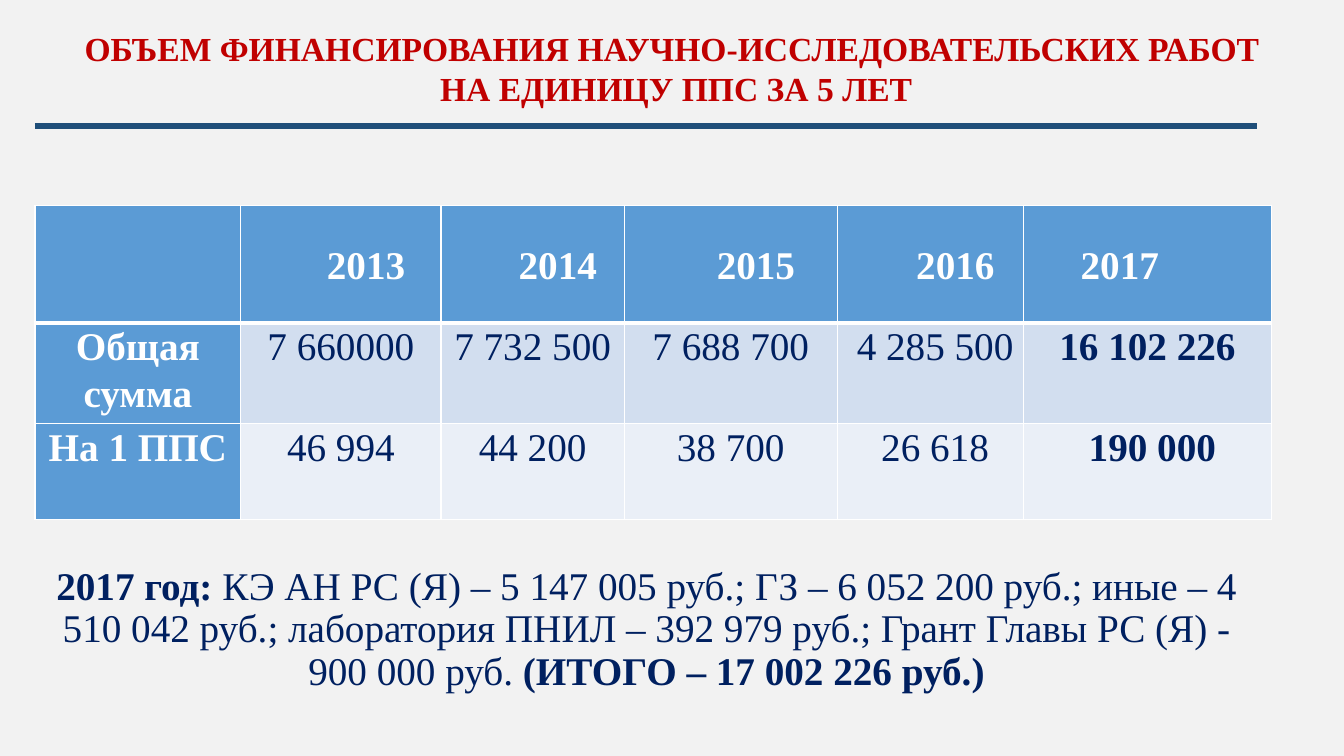
from lxml.etree import SubElement
from pptx import Presentation
from pptx.dml.color import RGBColor
from pptx.enum.shapes import MSO_CONNECTOR as CONN
from pptx.enum.text import MSO_ANCHOR as ANCHOR, PP_ALIGN as ALIGN
from pptx.oxml import parse_xml
from pptx.oxml.ns import nsdecls, qn
from pptx.util import Pt

FONT = "Times New Roman"
RED, NAVY, WHITE = "C00000", "002060", "FFFFFF"
RULE, HEADER, BANDS = "1F4E79", "5B9BD5", ["D2DEEF", "EAEFF7"]
COLS = [147, 143, 131, 152, 133, 177.4]
ROWS = [83.5, 65.5, 68.4]
YEARS = ["2013", "2014", "2015", "2016", "2017"]
AMOUNTS = [
    ("Общая сумма", "7 660000", "7 732 500", "7 688 700", " 4 285 500", "16 102 226"),
    ("На 1 ППС", "46 994", "44 200", "38 700", " 26 618", " 190 000"),
]


def color(value):
    """Turn a hex string into a colour."""
    return RGBColor.from_string(value)


def add_run(p, text, size, fill, bold):
    """Append one styled run to a paragraph."""
    r = p.add_run()
    r.text = text
    r.font.name, r.font.size, r.font.bold = FONT, Pt(size), bold
    r.font.color.rgb = color(fill)


def add_text(s, box, paragraphs, size, fill, anchor, spacing):
    """Add a centred text box; each paragraph is a list of (text, bold)."""
    sp = s.shapes.add_textbox(*map(Pt, box))
    tf = sp.text_frame
    tf.word_wrap, tf.vertical_anchor = True, anchor
    for i, runs in enumerate(paragraphs):
        p = tf.add_paragraph() if i else tf.paragraphs[0]
        p.alignment, p.line_spacing = ALIGN.CENTER, spacing
        for text, bold in runs:
            add_run(p, text, size, fill, bold)


def add_rule(s, x1, x2, y):
    """Add the thick horizontal line under the title."""
    line = s.shapes.add_connector(CONN.STRAIGHT, Pt(x1), Pt(y), Pt(x2), Pt(y))
    line.line.color.rgb = color(RULE)
    line.line.width = Pt(4.5)
    SubElement(line._element.spPr, qn("a:effectLst"))


def set_borders(cell, top, bottom):
    """Draw white borders round a cell, 1 pt at the sides."""
    widths = {"lnL": 1, "lnR": 1, "lnT": top, "lnB": bottom}
    for i, (tag, width) in enumerate(widths.items()):
        cell._tc.get_or_add_tcPr().insert(i, parse_xml(
            f'<a:{tag} {nsdecls("a")} w="{Pt(width)}"><a:solidFill>'
            f'<a:srgbClr val="{WHITE}"/></a:solidFill></a:{tag}>'))


def fill_cell(cell, text, row, col):
    """Fill and format one cell by its place in the table."""
    heading = row == 0 or col == 0
    cell.fill.solid()
    cell.fill.fore_color.rgb = color(HEADER if heading else BANDS[row - 1])
    set_borders(cell, 3 if row == 1 else 1, 3 if row == 0 else 1)
    cell.margin_left = cell.margin_right = Pt(5)
    cell.margin_top = cell.margin_bottom = 0
    cell.vertical_anchor = ANCHOR.TOP if row else ANCHOR.MIDDLE
    p = cell.text_frame.paragraphs[0]
    p.alignment, p.line_spacing = ALIGN.CENTER, 1.07
    last = col == len(COLS) - 1
    if row == 0:
        p._p.get_or_add_pPr().set("marL", str(Pt(36)))
        if last:
            p.alignment, p.space_after = ALIGN.LEFT, Pt(8)
    if text:
        add_run(p, text, 28, WHITE if heading else NAVY, heading or last)


def add_funding_table(s, left, top):
    """Add the table of funding by year."""
    size = Pt(sum(COLS)), Pt(sum(ROWS))
    table = s.shapes.add_table(len(ROWS), len(COLS), Pt(left), Pt(top), *size).table
    for column, width in zip(table.columns, COLS):
        column.width = Pt(width)
    for row, height in zip(table.rows, ROWS):
        row.height = Pt(height)
    for i, values in enumerate([("", *YEARS), *AMOUNTS]):
        for j, text in enumerate(values):
            fill_cell(table.cell(i, j), text, i, j)


def main():
    """Build the slide and save it."""
    prs = Presentation()
    prs.slide_width, prs.slide_height = Pt(960), Pt(540)
    s = prs.slides.add_slide(prs.slide_layouts[6])
    s.background.fill.solid()
    s.background.fill.fore_color.rgb = color("F2F2F2")
    add_text(s, (0, 16.5, 960, 65.5), [
        [("ОБЪЕМ ФИНАНСИРОВАНИЯ НАУЧНО-ИССЛЕДОВАТЕЛЬСКИХ РАБОТ", True)],
        [(" НА ЕДИНИЦУ ППС ЗА 5 ЛЕТ", True)],
    ], 24, RED, ANCHOR.TOP, 1.0)
    add_rule(s, 25, 898, 90)
    add_funding_table(s, 25, 147)
    add_text(s, (25, 404.5, 873.5, 94.5), [[
        ("2017 год: ", True),
        ("КЭ АН РС (Я) – 5 147 005 руб.; ГЗ – 6 052 200 руб.; иные – 4 510 042 руб.; "
         "лаборатория ПНИЛ – 392 979 руб.; Грант Главы РС (Я) - 900 000 руб. ", False),
        ("(ИТОГО – 17 002 226 руб.)", True),
    ]], 28, NAVY, ANCHOR.BOTTOM, 0.9)
    prs.save("out.pptx")


if __name__ == "__main__":
    main()
